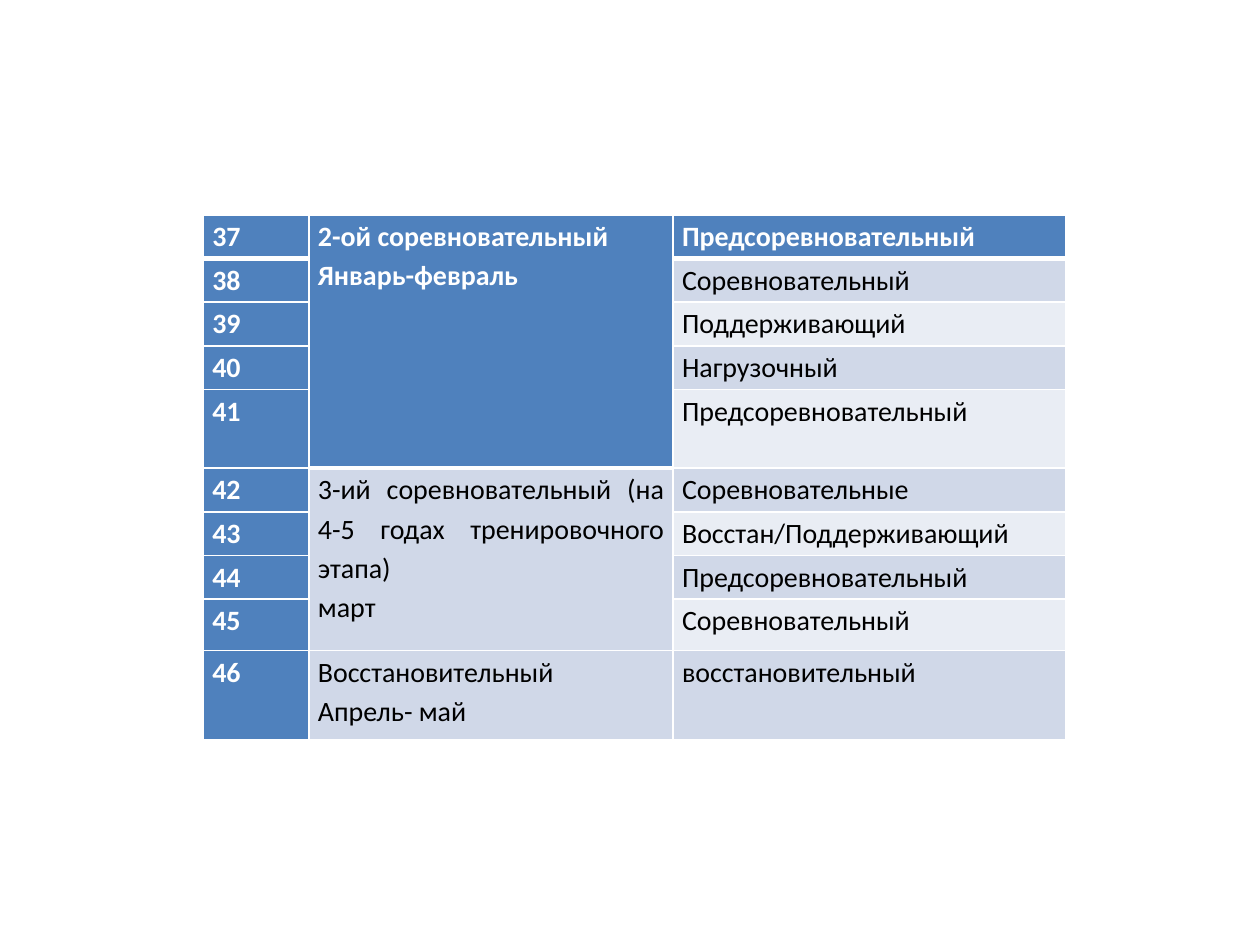
import pptx
import pptx.util
import pptx.dml.color
import pptx.enum.text
import lxml.etree
from dataclasses import dataclass
from pptx.util import Cm, Pt


@dataclass(frozen=True)
class Theme:
    font: str = "Calibri"
    size: int = 16
    blue: str = "4F81BD"
    band: str = "D0D8E8"
    pale: str = "E9EDF4"
    white: str = "FFFFFF"
    black: str = "000000"
    thin: int = 1
    thick: int = 3


THEME = Theme()
COLS = [2.13, 7.34, 7.92]
ROWS = [0.88] * 4 + [1.58] + [0.88] * 3 + [1.04, 1.8]
FIRST = 37
STAGES = {
    0: (5, ["2-ой соревновательный", "Январь-февраль"]),
    5: (4, ["3-ий соревновательный (на 4-5 годах тренировочного этапа)", "март"]),
    9: (1, ["Восстановительный", "Апрель- май"]),
}
CYCLES = [
    "Предсоревновательный", "Соревновательный", "Поддерживающий",
    "Нагрузочный", "Предсоревновательный", "Соревновательные",
    "Восстан/Поддерживающий", "Предсоревновательный", "Соревновательный",
    "восстановительный",
]
HEAD_ENDS = [1, 5, 1]


def color(code):
    return pptx.dml.color.RGBColor.from_string(code)


def edge(cell, sides):
    props = cell._tc.get_or_add_tcPr()
    space = pptx.oxml.ns.nsdecls("a")
    for place, (side, width) in enumerate(sides.items()):
        line = pptx.oxml.parse_xml(
            f'<a:ln{side} {space} w="{Pt(width)}"><a:solidFill>'
            f'<a:srgbClr val="{THEME.white}"/></a:solidFill></a:ln{side}>')
        props.insert(place, line)


def paint(cell, row, col):
    end = HEAD_ENDS[col]
    head = col == 0 or row < end
    shade = THEME.blue if head else THEME.pale if col == 2 and row in (2, 4, 6, 8) else THEME.band
    cell.fill.solid()
    cell.fill.fore_color.rgb = color(shade)
    cell.margin_left = cell.margin_right = Cm(0.18)
    cell.margin_top = cell.margin_bottom = 0
    top = THEME.thick if row == end else THEME.thin
    base = THEME.thick if row in (0, end - 1) else THEME.thin
    edge(cell, {"L": THEME.thin, "R": THEME.thin, "T": top, "B": base})
    return head


def write(cell, lines, head):
    frame = cell.text_frame
    for place, line in enumerate(lines):
        para = frame.add_paragraph() if place else frame.paragraphs[0]
        para.alignment = pptx.enum.text.PP_ALIGN.JUSTIFY
        para.line_spacing = 1.15
        run = para.add_run()
        run.text = line
        run.font.name = THEME.font
        run.font.size = Pt(THEME.size)
        run.font.bold = head
        run.font.color.rgb = color(THEME.white if head else THEME.black)


def plan(slide, left, top, width, height):
    table = slide.shapes.add_table(
        len(ROWS), len(COLS), Cm(left), Cm(top), Cm(width), Cm(height)).table
    for col, size in zip(table.columns, COLS):
        col.width = Cm(size * width / sum(COLS))
    for row, size in zip(table.rows, ROWS):
        row.height = Cm(size * height / sum(ROWS))
    for row, cycle in enumerate(CYCLES):
        span, stage = STAGES.get(row, (1, []))
        for col, lines in enumerate([[str(FIRST + row)], stage, [cycle]]):
            cell = table.cell(row, col)
            write(cell, lines, paint(cell, row, col))
        if span > 1:
            table.cell(row, 1).merge(table.cell(row + span - 1, 1))


def main():
    deck = pptx.Presentation()
    deck.slide_width, deck.slide_height = Cm(25.4), Cm(19.05)
    slide = deck.slides.add_slide(deck.slide_layouts[6])
    plan(slide, 4.1, 4.33, sum(COLS), sum(ROWS))
    deck.save("out.pptx")


if __name__ == "__main__":
    main()
